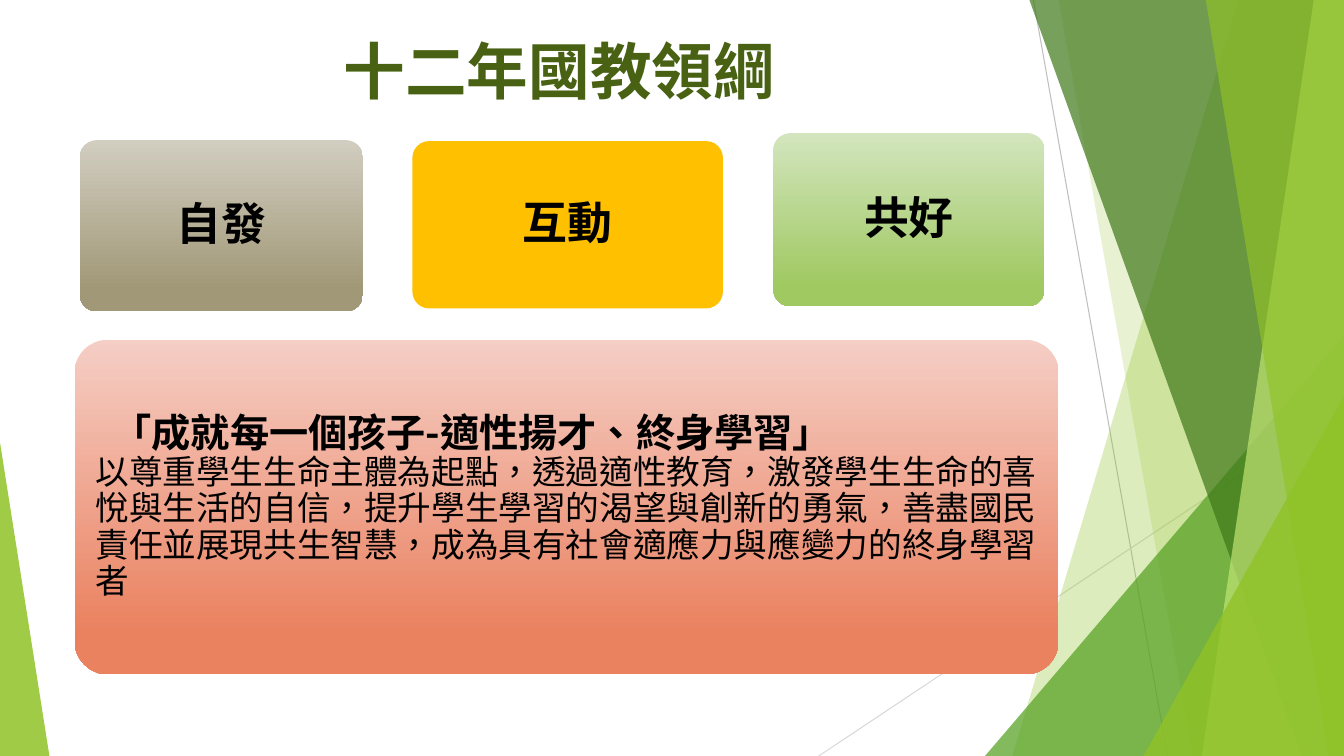
from dataclasses import dataclass

from lxml import etree
from pptx import Presentation
from pptx.dml.color import RGBColor
from pptx.enum.lang import MSO_LANGUAGE_ID
from pptx.enum.shapes import MSO_CONNECTOR, MSO_SHAPE
from pptx.enum.text import MSO_ANCHOR, PP_ALIGN
from pptx.oxml.ns import qn
from pptx.shapes.autoshape import Shape
from pptx.slide import Slide
from pptx.text.text import TextFrame, _Paragraph
from pptx.util import Inches, Pt

STRAIGHT = MSO_CONNECTOR.STRAIGHT
TRIANGLE = MSO_SHAPE.ISOSCELES_TRIANGLE
ROUNDED = MSO_SHAPE.ROUNDED_RECTANGLE
CENTER, LEFT = PP_ALIGN.CENTER, PP_ALIGN.LEFT
MIDDLE = MSO_ANCHOR.MIDDLE
CHINESE = MSO_LANGUAGE_ID.TRADITIONAL_CHINESE

WIDTH, HEIGHT = 13.33, 7.5
CJK_FONT = "Noto Sans CJK SC"
COLORS = {
    "lime": "90C226", "green": "54A021", "forest": "3F7819", "pale": "C0E474",
    "gray": "BFBFBF", "light gray": "D9D9D9", "title": "486113", "black": "000000",
    "amber": "FFC000", "sand": "D1CDC0", "khaki": "A19877", "mint": "D3E5BE",
    "leaf": "A0C962", "pink": "F5CEC5", "coral": "EA815F",
}
HEADING = {"size": Pt(44), "name": "Karla", "bold": True}
LABEL = {"size": Pt(32), "name": CJK_FONT, "bold": True}
MOTTO = {"size": Pt(28), "name": CJK_FONT, "bold": True}
VISION = {"size": Pt(24), "name": CJK_FONT, "bold": False}


@dataclass
class Ray:
    start: tuple[float, float]
    end: tuple[float, float]
    color: str


@dataclass
class Band:
    """Facet between a slanted left side and the right edge of the slide."""
    top_x: float
    bottom_x: float
    color: str
    opacity: int


@dataclass
class Corner:
    """Triangle standing on the bottom edge of the slide."""
    left: float
    top: float
    width: float
    apex: float
    color: str
    opacity: int


@dataclass
class Card:
    box: tuple[float, float, float, float]
    colors: tuple[str, ...]
    inset: float
    align: PP_ALIGN
    lines: list[tuple[str, dict]]
    indent: float = 0


RAYS = [
    Ray((10.25, 0), (11.58, HEIGHT), "gray"),
    Ray((WIDTH, 4.03), (8.12, HEIGHT), "light gray"),
]
FACETS = [
    Band(12.28, 10.04, "lime", 30),
    Band(10.5, 11.83, "lime", 20),
    Corner(9.77, 3.33, 3.56, 1, "green", 72),
    Band(10.21, 12.91, "forest", 70),
    Band(13.03, 11.92, "pale", 70),
    Band(11.96, 13.18, "lime", 65),
    Corner(11.34, 3.93, 1.99, 1, "lime", 80),
    Corner(0, 4.39, 0.49, 0, "lime", 85),
]
CARDS = [
    Card((0.74, 3.37, 9.76, 3.32), ("pink", "coral"), 0.11, LEFT, [
        ("「成就每一個孩子-適性揚才、終身學習」", MOTTO),
        ("以尊重學生生命主體為起點，透過適性教育，激發學生生命的喜悅與生活的自信，"
         "提升學生學習的渴望與創新的勇氣，善盡國民責任並展現共生智慧，"
         "成為具有社會適應力與應變力的終身學習者", VISION),
    ], indent=0.17),
    Card((0.79, 1.39, 2.81, 1.7), ("sand", "khaki"), 0.13, CENTER, [("自發", LABEL)]),
    Card((4.09, 1.4, 3.08, 1.66), ("amber",), 0.13, CENTER, [("互動", LABEL)]),
    Card((7.67, 1.32, 2.69, 1.72), ("mint", "leaf"), 0.13, CENTER, [("共好", LABEL)]),
]


def rgb(name: str) -> RGBColor:
    return RGBColor.from_string(COLORS[name])


def paint(shape: Shape, colors: tuple[str, ...], opacity: int = 100) -> None:
    """Fill with one colour, or with a gradient running from top to bottom."""
    shape.shadow.inherit = False
    shape.line.fill.background()
    if len(colors) == 1:
        shape.fill.solid()
        shape.fill.fore_color.rgb = rgb(colors[0])
    else:
        shape.fill.gradient()
        shape.fill.gradient_angle = 270
        for stop, position, color in zip(shape.fill.gradient_stops, (0, 0.88), colors):
            stop.position = position
            stop.color.rgb = rgb(color)
    if opacity < 100:
        fill_color = shape._element.spPr.find(f".//{qn('a:srgbClr')}")
        etree.SubElement(fill_color, qn("a:alpha"), val=str(opacity * 1000))


def add_ray(slide: Slide, ray: Ray) -> None:
    ends = [Inches(value) for value in (*ray.start, *ray.end)]
    line = slide.shapes.add_connector(STRAIGHT, *ends)
    line.line.width = Pt(0.75)
    line.line.color.rgb = rgb(ray.color)
    etree.SubElement(line._element.spPr, qn("a:effectLst"))


def add_facet(slide: Slide, facet: Band | Corner) -> None:
    if isinstance(facet, Band):
        top_x, bottom_x = Inches(facet.top_x), Inches(facet.bottom_x)
        right, bottom = Inches(WIDTH), Inches(HEIGHT)
        outline = slide.shapes.build_freeform(top_x, 0)
        outline.add_line_segments(
            [(right, 0), (right, bottom), (bottom_x, bottom)], close=True)
        shape = outline.convert_to_shape()
    else:
        box = (facet.left, facet.top, facet.width, HEIGHT - facet.top)
        shape = slide.shapes.add_shape(TRIANGLE, *map(Inches, box))
        shape.adjustments[0] = facet.apex
    paint(shape, (facet.color,), facet.opacity)


def add_words(paragraph: _Paragraph, words: str, style: dict, color: str) -> None:
    run = paragraph.add_run()
    run.text = words
    for key, value in style.items():
        setattr(run.font, key, value)
    run.font.color.rgb = rgb(color)
    run.font.language_id = CHINESE
    latin = run._r.rPr.find(qn("a:latin"))
    latin.addnext(etree.Element(qn("a:ea"), typeface=CJK_FONT))


def set_insets(frame: TextFrame, inset: float) -> None:
    for side in ("left", "top", "right", "bottom"):
        setattr(frame, f"margin_{side}", Inches(inset))


def add_card(slide: Slide, card: Card) -> None:
    shape = slide.shapes.add_shape(ROUNDED, *map(Inches, card.box))
    shape.adjustments[0] = 0.1
    paint(shape, card.colors)
    frame = shape.text_frame
    frame.word_wrap = True
    frame.vertical_anchor = MIDDLE
    set_insets(frame, card.inset)
    paragraph = frame.paragraphs[0]
    paragraph.alignment = card.align
    paragraph.line_spacing = 0.9
    if card.indent:
        paragraph._p.get_or_add_pPr().set("indent", str(Inches(card.indent)))
    for number, (words, style) in enumerate(card.lines):
        if number:
            paragraph.add_line_break()
        add_words(paragraph, words, style, "black")


def add_title(slide: Slide, words: str) -> None:
    title = slide.shapes.add_textbox(*map(Inches, (3.18, 0.28, 4.74, 0.84)))
    title.text_frame.word_wrap = True
    paragraph = title.text_frame.paragraphs[0]
    paragraph.alignment = CENTER
    add_words(paragraph, words, HEADING, "title")


def main() -> None:
    deck = Presentation()
    deck.slide_width, deck.slide_height = Inches(WIDTH), Inches(HEIGHT)
    slide = deck.slides.add_slide(deck.slide_layouts[6])

    # Background rays and translucent facets
    for ray in RAYS:
        add_ray(slide, ray)
    for facet in FACETS:
        add_facet(slide, facet)

    # Vision, its three ideas and the title
    for card in CARDS:
        add_card(slide, card)
    add_title(slide, "十二年國教領綱")

    deck.save("out.pptx")


if __name__ == "__main__":
    main()
